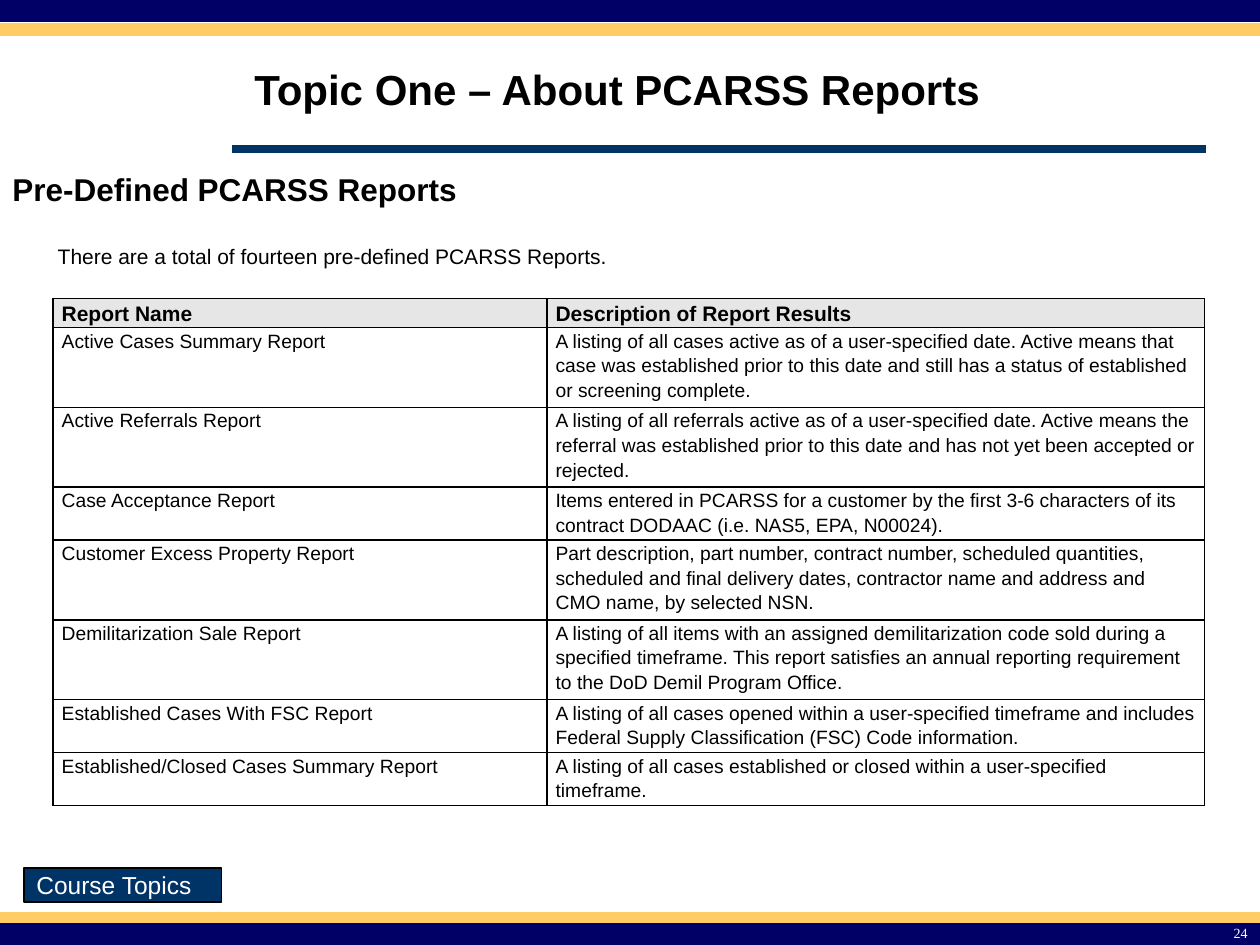
from lxml import etree
from pptx import Presentation, util as u
from pptx.dml.color import RGBColor
from pptx.enum import shapes, text
from pptx.oxml import ns

COLORS = {
    "navy": "000066",
    "gold": "FFCC66",
    "blue": "003366",
    "black": "000000",
    "white": "FFFFFF",
    "gray": "E6E6E6",
}
COLUMNS, ROWS = 100, 75
LINE_ROWS = 2.1  # height of one text line in the table
HEADER_ROWS = 2.3

# Report name, description, lines the description takes
REPORTS = [
    ("Active Cases Summary Report",
     "A listing of all cases active as of a user-specified date. Active means that case was "
     "established prior to this date and still has a status of established or screening complete.", 3),
    ("Active Referrals Report",
     "A listing of all referrals active as of a user-specified date. Active means the referral was "
     "established prior to this date and has not yet been accepted or rejected.", 3),
    ("Case Acceptance Report",
     "Items entered in PCARSS for a customer by the first 3-6 characters of its contract DODAAC "
     "(i.e. NAS5, EPA, N00024).", 2),
    ("Customer Excess Property Report",
     "Part description, part number, contract number, scheduled quantities, scheduled and final "
     "delivery dates, contractor name and address and CMO name, by selected NSN.", 3),
    ("Demilitarization Sale Report",
     "A listing of all items with an assigned demilitarization code sold during a specified "
     "timeframe. This report satisfies an annual reporting requirement to the DoD Demil Program "
     "Office.", 3),
    ("Established Cases With FSC Report",
     "A listing of all cases opened within a user-specified timeframe and includes Federal Supply "
     "Classification (FSC) Code information.", 2),
    ("Established/Closed Cases Summary Report",
     "A listing of all cases established or closed within a user-specified timeframe.", 2),
]


def color(name):
    return RGBColor.from_string(COLORS[name])


def write(frame, words, size=12, bold=False, ink="black", font="Arial",
          align=text.PP_ALIGN.LEFT, anchor=text.MSO_ANCHOR.TOP, spacing=None):
    frame.word_wrap = True
    frame.vertical_anchor = anchor
    para = frame.paragraphs[0]
    para.alignment = align
    if spacing:
        para.line_spacing = spacing
    span = para.add_run()
    span.text = words
    span.font.name = font
    span.font.size = u.Pt(size)
    span.font.bold = bold
    span.font.color.rgb = color(ink)


def add_borders(cell, ink="black", points=1):
    properties = cell._tc.get_or_add_tcPr()
    for side in ("lnL", "lnR", "lnT", "lnB"):
        edge = etree.SubElement(properties, ns.qn(f"a:{side}"), w=str(u.Pt(points)))
        fill = etree.SubElement(edge, ns.qn("a:solidFill"))
        etree.SubElement(fill, ns.qn("a:srgbClr"), val=COLORS[ink])


class SlideBuilder:
    """Places elements on the page by columns and rows of the grid."""

    def __init__(self, deck):
        self.page = deck.slides.add_slide(deck.slide_layouts[6])
        self.column = deck.slide_width / COLUMNS
        self.row = deck.slide_height / ROWS

    def place(self, left, top, width, height):
        return (round(left * self.column), round(top * self.row),
                round(width * self.column), round(height * self.row))

    def rectangle(self, area, fill, line):
        box = self.page.shapes.add_shape(shapes.MSO_SHAPE.RECTANGLE, *self.place(*area))
        box.shadow.inherit = False
        box.fill.solid()
        box.fill.fore_color.rgb = color(fill)
        box.line.color.rgb = color(line)
        box.line.width = u.Pt(0.75)
        return box

    def rule(self, start, end, row, ink, points):
        ends = self.place(start, row, end, row)
        line = self.page.shapes.add_connector(shapes.MSO_CONNECTOR.STRAIGHT, *ends)
        line.line.color.rgb = color(ink)
        line.line.width = u.Pt(points)
        etree.SubElement(line._element.spPr, ns.qn("a:effectLst"))

    def label(self, area, words, **style):
        box = self.page.shapes.add_textbox(*self.place(*area))
        write(box.text_frame, words, **style)

    def table(self, left, top, widths, heights, records):
        area = self.place(left, top, sum(widths), sum(heights))
        grid = self.page.shapes.add_table(len(records), len(widths), *area).table
        for column, width in zip(grid.columns, widths):
            column.width = round(width * self.column)
        for index, (height, record) in enumerate(zip(heights, records)):
            grid.rows[index].height = round(height * self.row)
            header = index == 0
            for cell, words in zip(grid.rows[index].cells, record):
                add_borders(cell)
                cell.fill.solid()
                cell.fill.fore_color.rgb = color("gray" if header else "white")
                cell.margin_left = cell.margin_right = u.Inches(0.07)
                cell.margin_top = cell.margin_bottom = 0
                write(cell.text_frame, words, size=12 if header else 11,
                      bold=header, spacing=1.15)


def main():
    deck = Presentation()
    deck.slide_width, deck.slide_height = u.Inches(10), u.Inches(7.5)
    builder = SlideBuilder(deck)
    middle = text.MSO_ANCHOR.MIDDLE

    builder.rule(18.4, 95.7, 11.8, "blue", 4.5)
    for top, height, ink in ((1.9, 0.9, "gold"), (0, 1.7, "navy"),
                             (72.4, 0.8, "gold"), (73.3, 1.7, "navy")):
        builder.rectangle((0, top, COLUMNS, height), ink, ink)
    button = builder.rectangle((1.9, 68.9, 15.7, 2.7), "blue", "black")
    write(button.text_frame, "Course Topics", size=14, ink="white", anchor=middle)

    builder.label((19.2, 3.1, 80.8, 7.8), "Topic One – About PCARSS Reports",
                  size=24, bold=True, anchor=middle)
    builder.label((0, 13, 75.9, 4), "Pre-Defined PCARSS Reports", size=18, bold=True)
    builder.label((3.6, 18.8, 77.5, 3),
                  "There are a total of fourteen pre-defined PCARSS Reports.")

    records = [("Report Name", "Description of Report Results")]
    records += [(name, description) for name, description, _ in REPORTS]
    heights = [HEADER_ROWS] + [lines * LINE_ROWS for *_, lines in REPORTS]
    builder.table(4.2, 23.7, (39.2, 52.2), heights, records)

    builder.label((76.7, 72.9, 23.3, 5.2), "24", size=8, ink="white",
                  font="Times New Roman", align=text.PP_ALIGN.RIGHT)
    deck.save("out.pptx")


if __name__ == "__main__":
    main()
